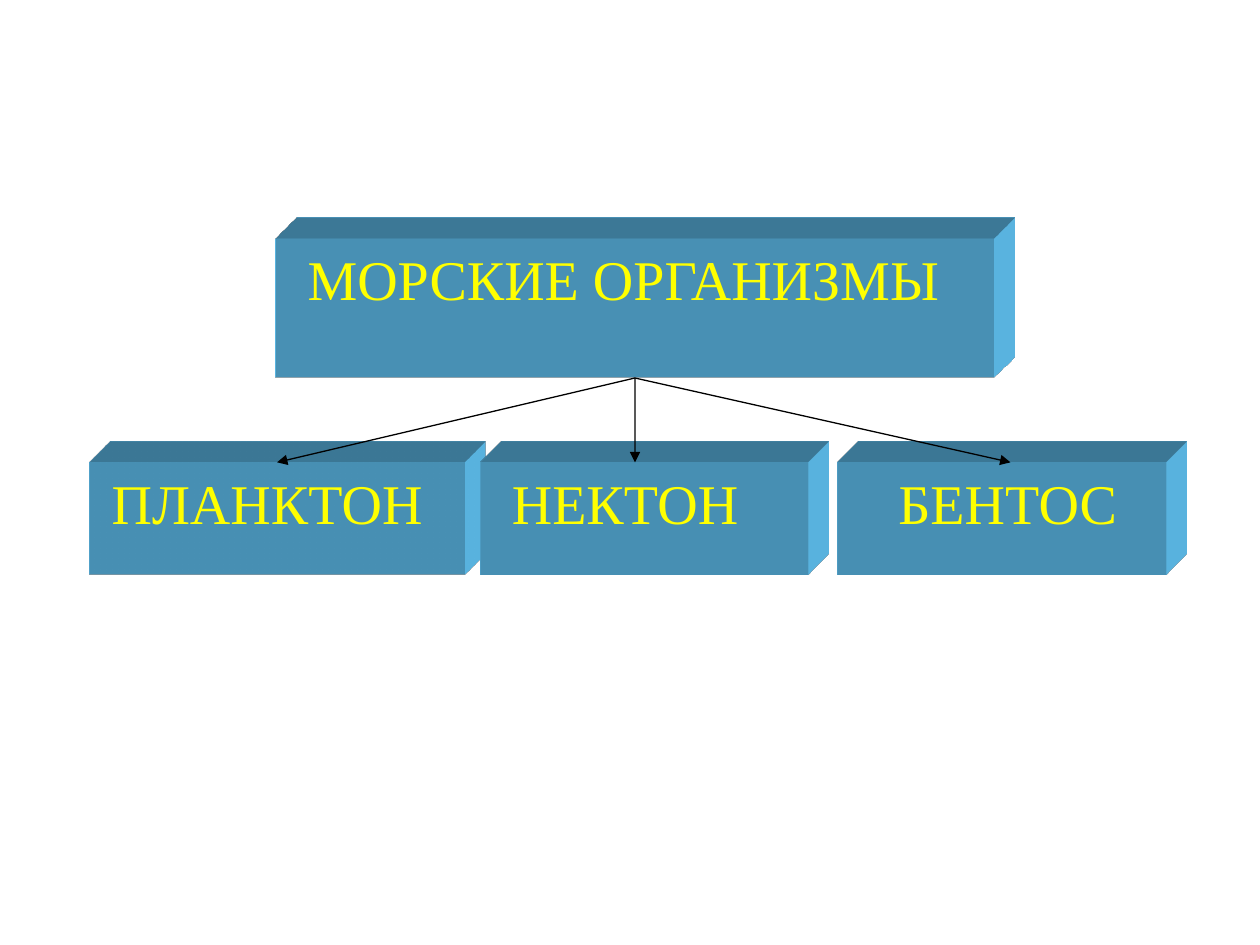
"""Build a slide that sorts sea organisms into three groups."""
from lxml.etree import SubElement as Sub
from pptx import Presentation as Deck
from pptx.dml.color import RGBColor as Rgb
from pptx.enum.shapes import MSO_CONNECTOR as Link, MSO_SHAPE as Form
from pptx.enum.text import MSO_ANCHOR as Anchor, PP_ALIGN as Align
from pptx.oxml import parse_xml
from pptx.oxml.ns import nsdecls, qn
from pptx.util import Cm, Pt

HUES = {"box": "66CCFF", "text": "FFFF00", "line": "000000"}
SCENE = f"""<a:scene3d {nsdecls('a')}>
<a:camera prst="legacyObliqueTopRight"/><a:lightRig rig="legacyFlat3" dir="b"/>
</a:scene3d>"""
DEPTH = f"""<a:sp3d {nsdecls('a')} extrusionH="430200" prstMaterial="legacyMatte">
<a:bevelT w="13500" h="13500" prst="angle"/><a:bevelB w="13500" h="13500" prst="angle"/>
<a:extrusionClr><a:srgbClr val="{HUES['box']}"/></a:extrusionClr>
</a:sp3d>"""


def write(shape, text, size=32, font="Times New Roman", hue="text", inset=0.25):
    frame = shape.text_frame
    frame.word_wrap = True
    frame.vertical_anchor = Anchor.TOP
    frame.margin_left = Cm(inset)
    para = frame.paragraphs[0]
    para.alignment = Align.LEFT
    run = para.add_run()
    run.text = text
    run.font.size = Pt(size)
    run.font.name = font
    run.font.color.rgb = Rgb.from_string(HUES[hue])


deck = Deck()
deck.slide_width, deck.slide_height = Cm(25.4), Cm(19.05)
slide = deck.slides.add_slide(deck.slide_layouts[6])

boxes = {}
for text, left, top, width, height, inset in (
    ("ПЛАНКТОН", 1.8, 9.32, 7.57, 2.26, 0.45),
    ("НЕКТОН", 9.68, 9.32, 6.6, 2.26, 0.64),
    ("БЕНТОС", 16.89, 9.32, 6.6, 2.26, 1.22),
    ("МОРСКИЕ ОРГАНИЗМЫ", 5.56, 4.8, 14.48, 2.82, 0.64),
):
    box = slide.shapes.add_shape(Form.RECTANGLE, Cm(left), Cm(top), Cm(width), Cm(height))
    box.shadow.inherit = False
    box.fill.solid()
    box.fill.fore_color.rgb = Rgb.from_string(HUES["box"])
    box.line.fill.background()
    for part in (SCENE, DEPTH):
        box._element.spPr.append(parse_xml(part))
    write(box, text, inset=inset)
    boxes[text] = box

for end, goal in ((12.8, None), (5.56, "ПЛАНКТОН"), (20.37, None)):
    arrow = slide.shapes.add_connector(Link.STRAIGHT, Cm(12.8), Cm(7.62), Cm(end), Cm(9.32))
    arrow.begin_connect(boxes["МОРСКИЕ ОРГАНИЗМЫ"], 2)
    if goal:
        arrow.end_connect(boxes[goal], 0)
    arrow.line.color.rgb = Rgb.from_string(HUES["line"])
    arrow.line.width = Pt(0.75)
    Sub(arrow.line._get_or_add_ln(), qn("a:tailEnd"), type="triangle")
    Sub(arrow._element.spPr, qn("a:effectLst"))

deck.save("out.pptx")
